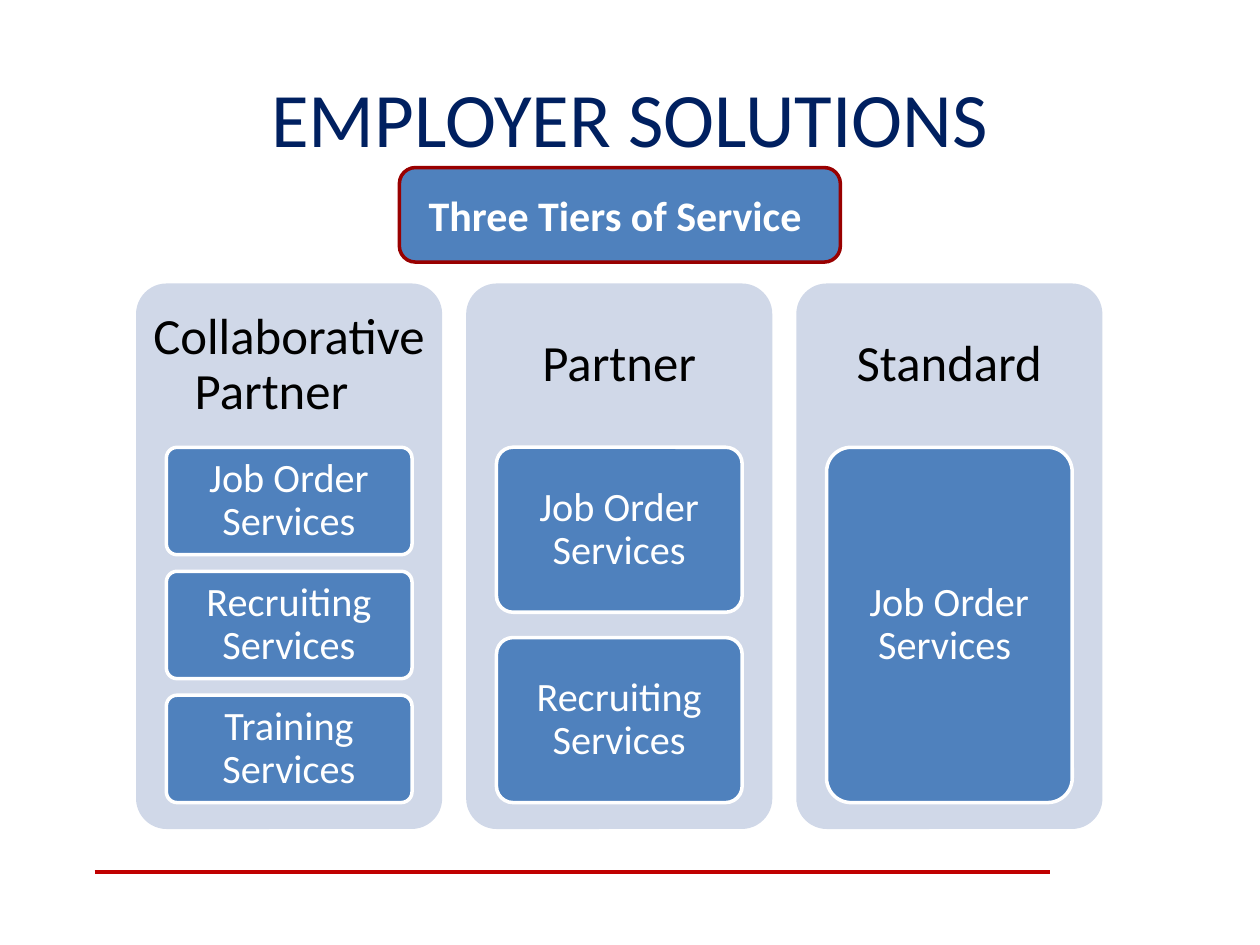
from dataclasses import dataclass

from lxml.etree import SubElement
from pptx import Presentation
from pptx.dml.color import RGBColor
from pptx.enum.shapes import MSO_CONNECTOR, MSO_SHAPE
from pptx.enum.text import MSO_ANCHOR, PP_ALIGN
from pptx.oxml.ns import qn
from pptx.util import Inches, Pt


@dataclass(frozen=True)
class Theme:
    font: str = "Calibri"
    navy: str = "002060"
    blue: str = "4F81BD"
    pale: str = "D0D8E8"
    white: str = "FFFFFF"
    black: str = "000000"
    maroon: str = "990000"
    red: str = "C00000"
    title_size: int = 44
    heading_size: int = 29
    banner_size: int = 24
    card_size: int = 23


@dataclass(frozen=True)
class Box:
    left: float
    top: float
    width: float
    height: float

    def lengths(self):
        return [Inches(value) for value in (self.left, self.top, self.width, self.height)]


@dataclass(frozen=True)
class Tier:
    heading: str
    services: tuple[str, ...]


THEME = Theme()
TIERS = (
    Tier("Collaborative Partner\t",
         ("Job Order Services", "Recruiting Services", "Training Services")),
    Tier("Partner", ("Job Order Services", "Recruiting Services")),
    Tier("Standard", ("Job Order Services ",)),
)
FIRST_PANEL = Box(1.08, 2.25, 2.43, 4.33)
PANEL_PITCH = 2.62
HEADING_HEIGHT = 1.3
CARD_WIDTH = 1.95
CARD_STACK_HEIGHT = 2.82
CARD_GAP_RATIO = 2 / 13


def write_text(shape, text: str, size: int, color: str, bold: bool = False,
               spacing: float = 1.0, margins: tuple[float, float] = (0.1, 0.05)) -> None:
    frame = shape.text_frame
    horizontal, vertical = (Inches(margin) for margin in margins)
    frame_format = {
        "word_wrap": True, "vertical_anchor": MSO_ANCHOR.MIDDLE,
        "margin_left": horizontal, "margin_right": horizontal,
        "margin_top": vertical, "margin_bottom": vertical,
    }
    for name, value in frame_format.items():
        setattr(frame, name, value)
    paragraph = frame.paragraphs[0]
    paragraph.alignment = PP_ALIGN.CENTER
    paragraph.line_spacing = spacing
    run = paragraph.add_run()
    run.text = text
    for name, value in {"name": THEME.font, "size": Pt(size), "bold": bold}.items():
        setattr(run.font, name, value)
    run.font.color.rgb = RGBColor.from_string(color)


def add_rounded_box(slide, box: Box, fill: str, outline: str | None = None,
                    corner: float = 0.1):
    shape = slide.shapes.add_shape(MSO_SHAPE.ROUNDED_RECTANGLE, *box.lengths())
    shape.adjustments[0] = corner
    shape.shadow.inherit = False
    shape.fill.solid()
    shape.fill.fore_color.rgb = RGBColor.from_string(fill)
    if outline:
        shape.line.color.rgb = RGBColor.from_string(outline)
        shape.line.width = Pt(2)
    else:
        shape.line.fill.background()
    return shape


def add_rule(slide) -> None:
    rule = slide.shapes.add_connector(
        MSO_CONNECTOR.STRAIGHT, Inches(0.75), Inches(6.92), Inches(8.33), Inches(6.92))
    rule.line.color.rgb = RGBColor.from_string(THEME.red)
    rule.line.width = Pt(2.25)
    SubElement(rule._element.spPr, qn("a:effectLst"))


def add_tier(slide, tier: Tier, panel: Box) -> None:
    """Draw a panel with its heading and equal cards that fill the stack."""
    add_rounded_box(slide, panel, THEME.pale)
    heading_box = Box(panel.left, panel.top, panel.width, HEADING_HEIGHT)
    heading = slide.shapes.add_textbox(*heading_box.lengths())
    write_text(heading, tier.heading, THEME.heading_size, THEME.black,
               spacing=0.9, margins=(0.12, 0.12))

    count = len(tier.services)
    height = CARD_STACK_HEIGHT / (count + CARD_GAP_RATIO * (count - 1))
    left = panel.left + (panel.width - CARD_WIDTH) / 2
    for index, service in enumerate(tier.services):
        top = panel.top + HEADING_HEIGHT + index * height * (1 + CARD_GAP_RATIO)
        card = add_rounded_box(slide, Box(left, top, CARD_WIDTH, height),
                               THEME.blue, THEME.white)
        write_text(card, service, THEME.card_size, THEME.white,
                   spacing=0.9, margins=(0.06, 0.05))


def main() -> None:
    presentation = Presentation()
    presentation.slide_width = Inches(10)
    presentation.slide_height = Inches(7.5)
    slide = presentation.slides.add_slide(presentation.slide_layouts[6])

    add_rule(slide)
    title = slide.shapes.add_textbox(*Box(0.5, 0.3, 9, 1.25).lengths())
    write_text(title, "EMPLOYER SOLUTIONS", THEME.title_size, THEME.navy)
    for index, tier in enumerate(TIERS):
        panel = Box(FIRST_PANEL.left + index * PANEL_PITCH, FIRST_PANEL.top,
                    FIRST_PANEL.width, FIRST_PANEL.height)
        add_tier(slide, tier, panel)
    banner = add_rounded_box(slide, Box(3.17, 1.33, 3.5, 0.75),
                             THEME.blue, THEME.maroon, corner=0.17)
    write_text(banner, "Three Tiers of Service ", THEME.banner_size, THEME.white, bold=True)

    presentation.save("out.pptx")


if __name__ == "__main__":
    main()
